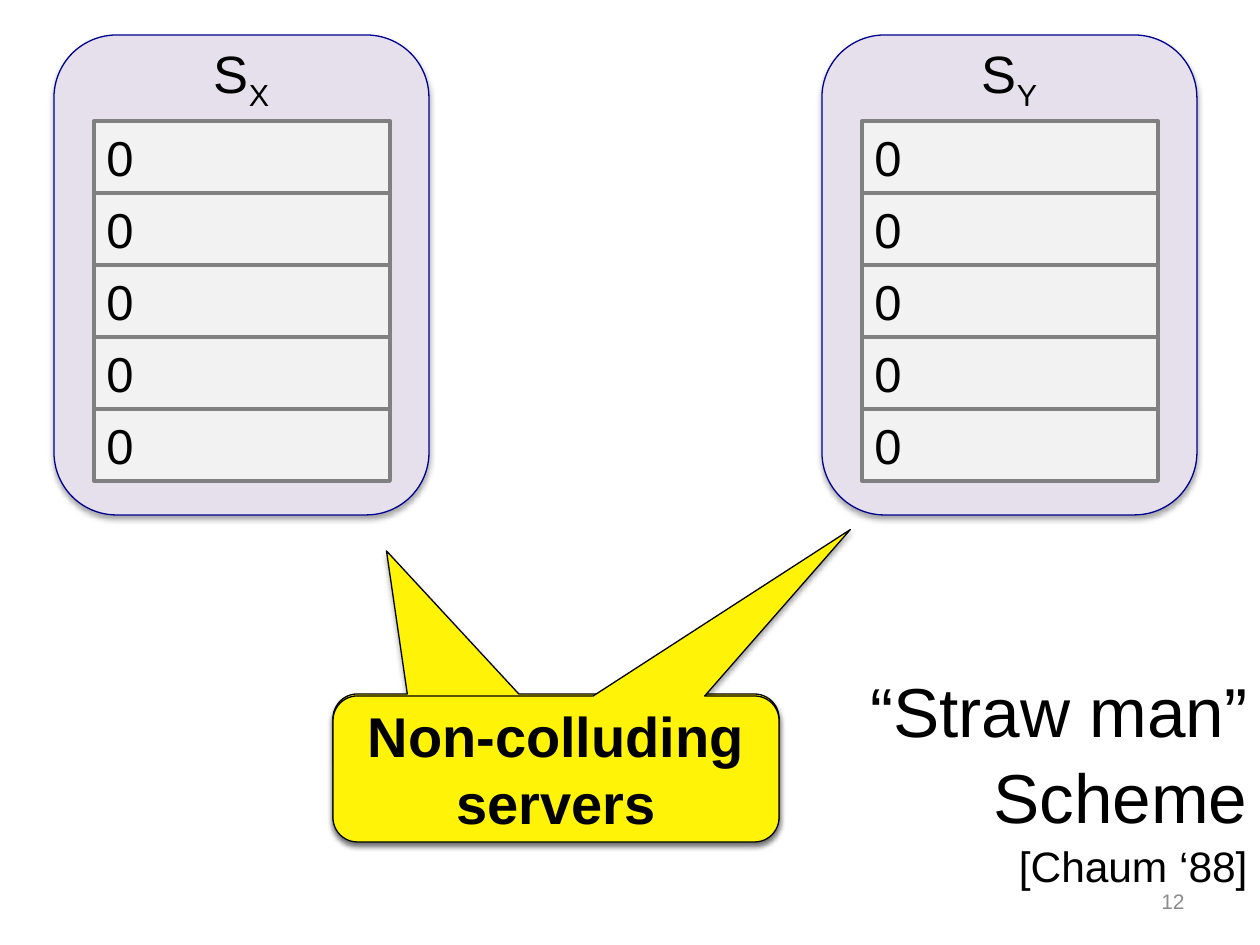
from dataclasses import dataclass

from lxml.etree import SubElement
from pptx import Presentation
from pptx.dml.color import RGBColor
from pptx.enum.shapes import MSO_SHAPE
from pptx.enum.text import MSO_ANCHOR, PP_ALIGN
from pptx.oxml.ns import qn
from pptx.util import Emu, Pt

EMU_PER_PX = 914400 / 126


@dataclass(frozen=True)
class Theme:
    font: str = "Arial"
    ink: str = "000000"
    muted: str = "8C8C8C"
    server_fill: str = "E6E0EC"
    server_line: str = "000090"
    cell_fill: str = "F2F2F2"
    cell_line: str = "808080"
    callout_fill: str = "FFF308"
    title_size: float = 39.6
    citation_size: float = 24.3
    label_size: float = 30
    cell_size: float = 28
    callout_size: float = 32
    number_size: float = 12
    thin: float = 0.75
    thick: float = 2.25


THEME = Theme()


def px(value):
    return Emu(round(value * EMU_PER_PX))


def add_run(paragraph, text, size, color=THEME.ink, bold=False, subscript=False):
    run = paragraph.add_run()
    run.text = text
    run.font.name = THEME.font
    run.font.size = Pt(size)
    run.font.bold = bold
    run.font.color.rgb = RGBColor.from_string(color)
    if subscript:
        run.font._element.set("baseline", "-25000")


def set_frame(shape, anchor, align):
    """Prepare the text frame and return its first paragraph."""
    frame = shape.text_frame
    frame.word_wrap = True
    frame.vertical_anchor = anchor
    paragraph = frame.paragraphs[0]
    paragraph.alignment = align
    return paragraph


def add_text_box(slide, box, anchor, align):
    shape = slide.shapes.add_textbox(*map(px, box))
    return shape, set_frame(shape, anchor, align)


def add_block(slide, preset, box, fill, line, width):
    shape = slide.shapes.add_shape(preset, *map(px, box))
    shape.shadow.inherit = False
    shape.fill.solid()
    shape.fill.fore_color.rgb = RGBColor.from_string(fill)
    shape.line.color.rgb = RGBColor.from_string(line)
    shape.line.width = Pt(width)
    return shape


def add_soft_shadow(shape):
    effects = shape._element.spPr.find(qn("a:effectLst"))
    shadow = SubElement(effects, qn("a:outerShdw"), blurRad=str(Pt(3.1)),
                        dist=str(Pt(1.8)), dir="5400000", rotWithShape="0")
    color = SubElement(shadow, qn("a:srgbClr"), val="000000")
    SubElement(color, qn("a:alpha"), val="35000")


def add_server(slide, left, name, values):
    top, width, cell_height = 35, 375, 72
    panel = add_block(slide, MSO_SHAPE.ROUNDED_RECTANGLE, (left, top, width, 480),
                      THEME.server_fill, THEME.server_line, THEME.thin)
    add_soft_shadow(panel)

    # Server name with its subscript
    _, label = add_text_box(slide, (left, top, width, 77),
                            MSO_ANCHOR.TOP, PP_ALIGN.CENTER)
    add_run(label, "S", THEME.label_size)
    add_run(label, name, THEME.label_size, subscript=True)

    # Stack of memory cells
    for row, value in enumerate(values):
        box = (left + 40, 121 + row * cell_height, 296, cell_height)
        cell = add_block(slide, MSO_SHAPE.RECTANGLE, box,
                         THEME.cell_fill, THEME.cell_line, THEME.thick)
        add_run(set_frame(cell, MSO_ANCHOR.TOP, PP_ALIGN.LEFT), value, THEME.cell_size)


def add_callout(slide, top, tip):
    shape = add_block(slide, MSO_SHAPE.ROUNDED_RECTANGULAR_CALLOUT, (333, top, 446, 146),
                      THEME.callout_fill, THEME.ink, THEME.thin)
    shape.adjustments[0], shape.adjustments[1] = tip
    add_soft_shadow(shape)
    return shape


def add_title(slide, lines, citation):
    shape, paragraph = add_text_box(slide, (684, 576, 576, 321),
                                    MSO_ANCHOR.BOTTOM, PP_ALIGN.RIGHT)
    paragraph.line_spacing = 1.04
    for line in lines:
        add_run(paragraph, line, THEME.title_size)
        paragraph.add_line_break()
    add_run(paragraph, citation, THEME.citation_size)


def main():
    presentation = Presentation()
    presentation.slide_width, presentation.slide_height = px(1260), px(945)
    slide = presentation.slides.add_slide(presentation.slide_layouts[6])

    # Title and slide number
    add_title(slide, ["“Straw man”", "Scheme"], "[Chaum ‘88]")
    _, number = add_text_box(slide, (903, 876, 294, 50), MSO_ANCHOR.MIDDLE, PP_ALIGN.RIGHT)
    add_run(number, "12", THEME.number_size, THEME.muted)

    # The two servers
    for left, name in ((54, "X"), (822, "Y")):
        add_server(slide, left, name, ["0"] * 5)

    # One callout pointing at each server; the front one carries the text
    add_callout(slide, 694, (-0.38, -1.48))
    front = add_callout(slide, 696, (0.66, -1.64))
    add_run(set_frame(front, MSO_ANCHOR.MIDDLE, PP_ALIGN.CENTER),
            "Non-colluding servers", THEME.callout_size, bold=True)

    presentation.save("out.pptx")


if __name__ == "__main__":
    main()
